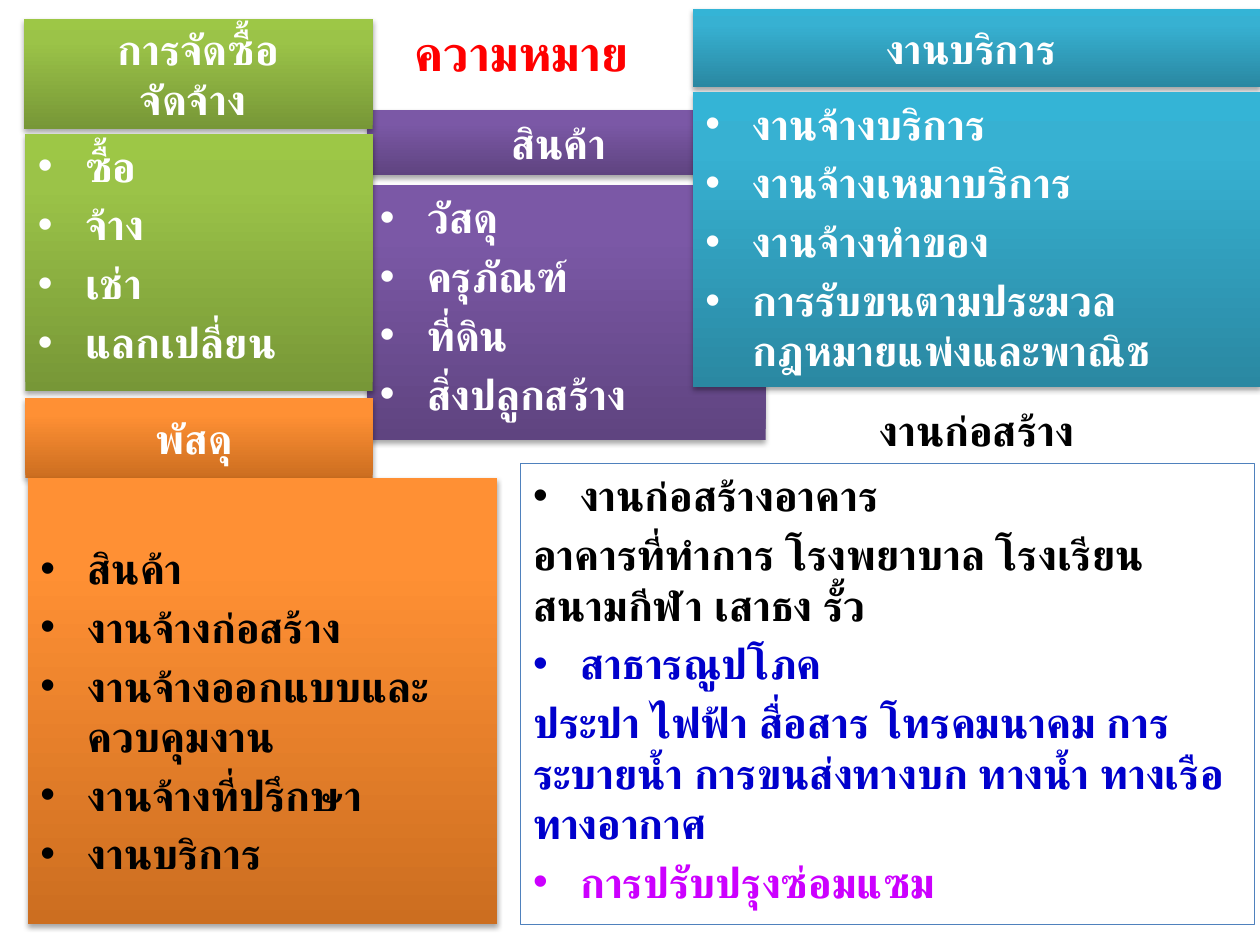
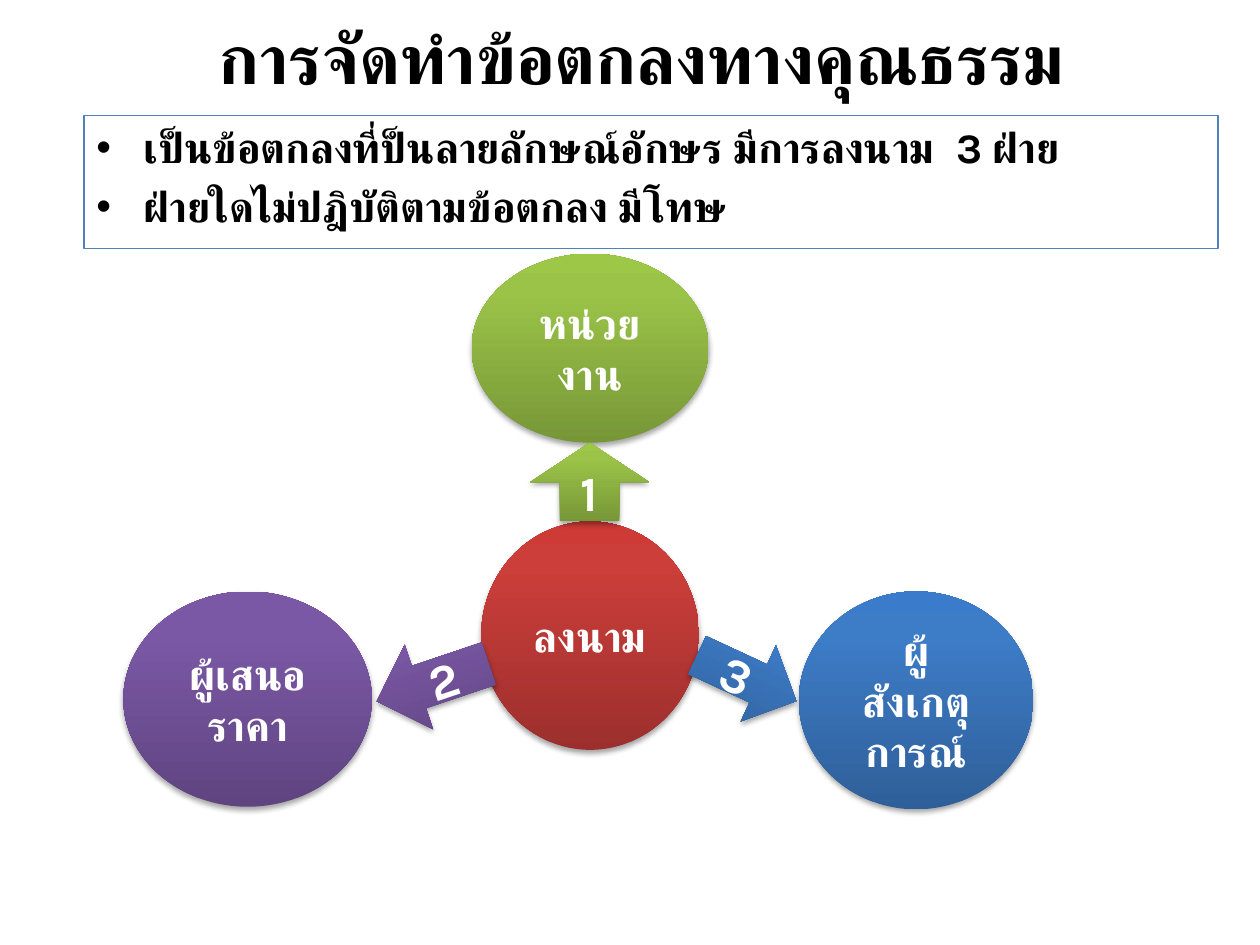
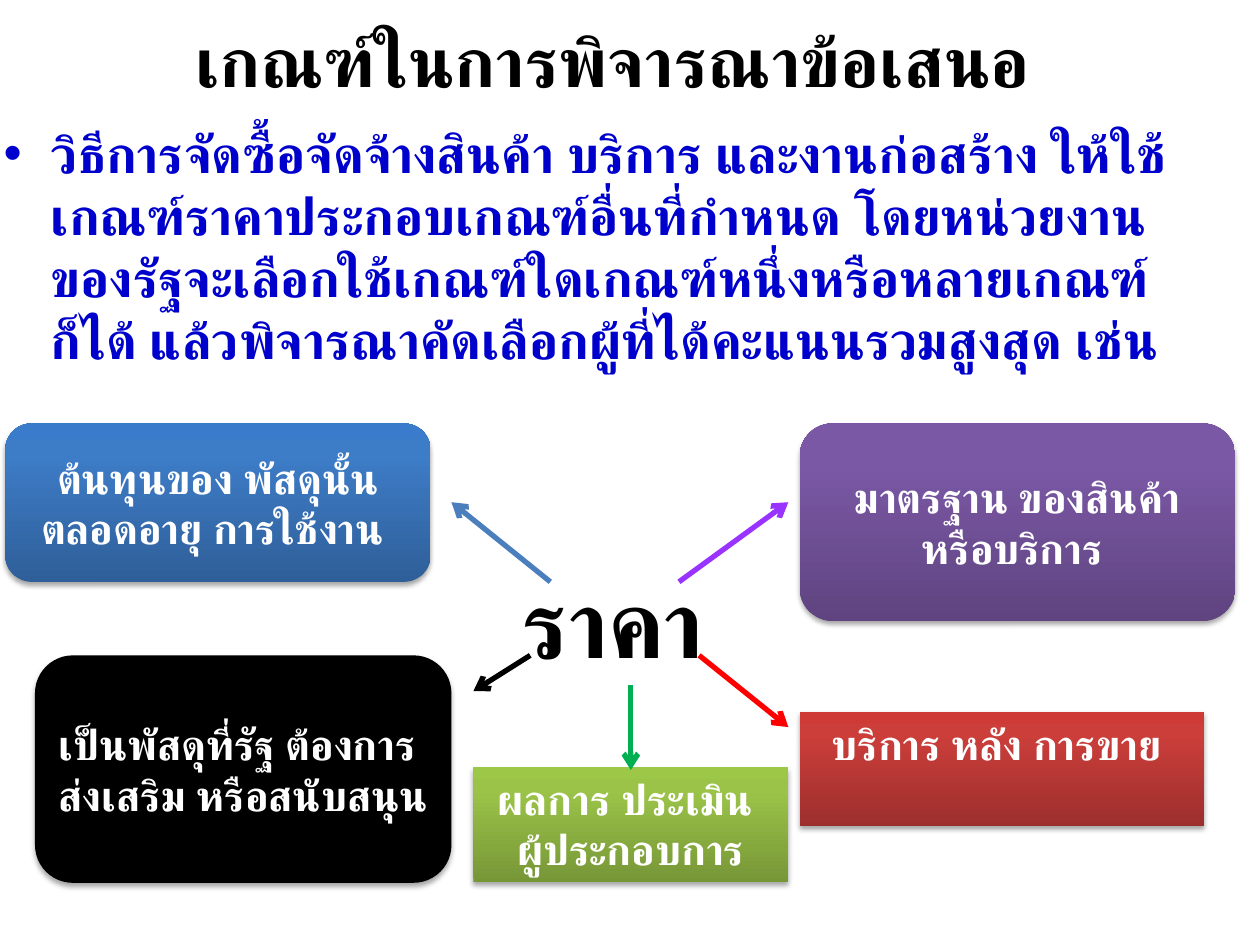
from dataclasses import dataclass

import pptx
import pptx.dml.color
import pptx.enum.shapes
import pptx.enum.text
import pptx.oxml
import pptx.oxml.ns
import pptx.util
from lxml import etree

Pt = pptx.util.Pt
qn = pptx.oxml.ns.qn
Kind = pptx.enum.shapes.MSO_SHAPE
Align = pptx.enum.text.PP_ALIGN
Anchor = pptx.enum.text.MSO_ANCHOR


@dataclass(frozen=True)
class Theme:
    font: str = "Karla"
    white: str = "FFFFFF"
    black: str = "000000"
    red: str = "FF0000"
    navy: str = "0000CC"
    magenta: str = "CC00FF"
    violet: str = "9933FF"
    leaf: str = "00B050"
    steel: str = "4B7EBC"
    border: str = "4F81BD"
    text: float = 24
    heading: float = 23.4
    number: float = 28
    lead: float = 29.6
    title: float = 39.6
    hero: float = 54
    indent: float = 27
    border_width: float = 0.75
    arrow_width: float = 3


theme = Theme()
GRADIENTS = {
    "purple": ("5F4480", "7B58A6", "7C57A8"),
    "cyan": ("2A88A2", "37B1D2", "34B4D6"),
    "green": ("779737", "9BC348", "9DC746"),
    "orange": ("CC6E20", "FF9034", "FF9136"),
    "red": ("9C2F2D", "CB3E3A", "CE3B37"),
    "blue": ("2F5F99", "3D7CC7", "3A7CCB"),
}
GRADIENT_STOPS = (0, 0.8, 1)

PANELS = [
    {
        "fill": "purple", "heading": "สินค้า ", "heading_size": theme.text,
        "heading_box": (210, 63, 225, 37), "list_box": (210, 106, 227.5, 145.5),
        "items": ["วัสดุ", "ครุภัณฑ์", "ที่ดิน", "สิ่งปลูกสร้าง"],
    },
    {
        "fill": "cyan", "heading": "งานบริการ ", "heading_size": theme.heading,
        "heading_box": (396, 5, 324, 44.5), "list_box": (396, 52.5, 324, 168.5),
        "items": ["งานจ้างบริการ", "งานจ้างเหมาบริการ", "งานจ้างทำของ",
                  "การรับขนตามประมวลกฎหมายแพ่งและพาณิช"],
    },
    {
        "fill": "green", "heading": "การจัดซื้อ\nจัดจ้าง ", "heading_size": theme.text,
        "heading_box": (13.5, 11, 199.5, 62.5), "list_box": (14.5, 76.5, 198.5, 147),
        "items": ["ซื้อ", "จ้าง", "เช่า", "แลกเปลี่ยน"],
    },
    {
        "fill": "orange", "heading": "พัสดุ ", "heading_size": theme.heading,
        "heading_box": (14.5, 227.5, 198.5, 45.5), "list_box": (16, 273, 268, 255),
        "items": ["สินค้า", "งานจ้างก่อสร้าง", "งานจ้างออกแบบและควบคุมงาน",
                  "งานจ้างที่ปรึกษา", "งานบริการ"],
        "color": theme.black, "top_inset": 37,
    },
]
MEANING = ("ความหมาย", (230, 9.5, 155.5, 41))
CONSTRUCTION_HEADING = ("งานก่อสร้าง ", (456.5, 222.5, 209.5, 45.5))
CONSTRUCTION_BOX = (297.5, 265, 419.5, 263.5)
CONSTRUCTION = [
    ("งานก่อสร้างอาคาร", theme.black, True),
    ("อาคารที่ทำการ โรงพยาบาล โรงเรียน สนามกีฬา เสาธง รั้ว", theme.black, False),
    ("สาธารณูปโภค", theme.navy, True),
    ("ประปา ไฟฟ้า สื่อสาร โทรคมนาคม การระบายน้ำ การขนส่งทางบก ทางน้ำ ทางเรือ ทางอากาศ",
     theme.navy, False),
    ("การปรับปรุงซ่อมแซม", theme.magenta, True),
]

AGREEMENT_TITLE = ("การจัดทำข้อตกลงทางคุณธรรม", (42.5, 9.5, 648, 45.5))
AGREEMENT_BOX = (48, 66, 648, 76)
AGREEMENT = ["เป็นข้อตกลงที่ป็นลายลักษณ์อักษร มีการลงนาม  3 ฝ่าย",
             "ฝ่ายใดไม่ปฎิบัติตามข้อตกลง มีโทษ"]
PARTIES = [
    ("red", (275, 298, 124.5, 130.5), ["ลงนาม"]),
    ("purple", (70.5, 338, 142, 123), ["ผู้เสนอราคา"]),
    ("blue", (456.5, 338, 134, 124.5), ["ผู้", "สังเกตุการณ์"]),
    ("green", (269.5, 145, 135.5, 108), ["หน่วย", "งาน"]),
]
PARTY_ARROWS = [
    (Kind.UP_ARROW, "green", (303, 253, 68, 45), 0),
    (Kind.LEFT_ARROW, "purple", (213.5, 364.5, 67.5, 51), 341.4),
    (Kind.RIGHT_ARROW, "blue", (395.5, 363.5, 62.5, 48), 24.9),
]

CRITERIA_TITLE = ("เกณฑ์ในการพิจารณาข้อเสนอ ", (-1.5, 9.5, 713, 49.5))
CRITERIA_BOX = (-5, 66, 713, 178)
CRITERIA = ["วิธีการจัดซื้อจัดจ้างสินค้า บริการ และงานก่อสร้าง ให้ใช้เกณฑ์ราคาประกอบเกณฑ์อื่นที่กำหนด "
            "โดยหน่วยงานของรัฐจะเลือกใช้เกณฑ์ใดเกณฑ์หนึ่งหรือหลายเกณฑ์ก็ได้ "
            "แล้วพิจารณาคัดเลือกผู้ที่ได้คะแนนรวมสูงสุด เช่น"]
PRICE = ("ราคา", (291.5, 319, 138.5, 72.5))
FACTORS = [
    (Kind.RECTANGLE, "red", (457, 407, 231, 65), ["บริการ หลัง การขาย "],
     Align.CENTER, Anchor.TOP),
    (Kind.ROUNDED_RECTANGLE, "blue", (3, 242, 243, 90.5),
     ["ต้นทุนของ พัสดุนั้น ตลอดอายุ การใช้งาน "], Align.CENTER, Anchor.MIDDLE),
    (Kind.ROUNDED_RECTANGLE, "purple", (457, 242, 249, 113),
     ["มาตรฐาน ของสินค้า หรือบริการ "], Align.CENTER, Anchor.MIDDLE),
    (Kind.ROUNDED_RECTANGLE, theme.black, (20, 374.5, 238, 130),
     ["เป็นพัสดุที่รัฐ ต้องการส่งเสริม หรือสนับสนุน"], Align.LEFT, Anchor.MIDDLE),
    (Kind.RECTANGLE, "green", (270.5, 438.5, 180, 65.5),
     ["ผลการ ประเมิน ", "ผู้ประกอบการ"], Align.CENTER, Anchor.TOP),
]
PRICE_ARROWS = [
    (theme.steel, (314.5, 332.5), (258, 287)),
    (theme.violet, (388, 332.5), (450.5, 287)),
    (theme.leaf, (360.5, 391.5), (360.5, 440)),
    (theme.red, (399.5, 374.5), (450.5, 415.5)),
    (theme.black, (303, 374.5), (270.5, 395)),
]


def rgb(color):
    return pptx.dml.color.RGBColor.from_string(color)


def points(values):
    return [Pt(value) for value in values]


def add_bullet(properties):
    properties.set("marL", str(Pt(theme.indent)))
    properties.set("indent", str(-Pt(theme.indent)))
    defaults = properties.find(qn("a:defRPr"))
    for tag, name, value in (("a:buFont", "typeface", "Arial"), ("a:buChar", "char", "•")):
        mark = etree.Element(qn(tag))
        mark.set(name, value)
        defaults.addprevious(mark)


def write(shape, lines, size=theme.text, color=theme.white, align=Align.CENTER,
          anchor=Anchor.MIDDLE, listed=False):
    frame = shape.text_frame
    frame.word_wrap = True
    frame.vertical_anchor = anchor
    for index, line in enumerate(lines):
        text, line_color, bullet = line if isinstance(line, tuple) else (line, color, listed)
        paragraph = frame.add_paragraph() if index else frame.paragraphs[0]
        paragraph.text = text
        paragraph.alignment = align
        if listed:
            paragraph.space_before = Pt(size * 0.2)
        font = paragraph.font
        font.name, font.size, font.bold = theme.font, Pt(size), True
        font.color.rgb = rgb(line_color)
        properties = paragraph._p.pPr
        complex_font = etree.SubElement(properties.find(qn("a:defRPr")), qn("a:cs"))
        complex_font.set("typeface", theme.font)
        if bullet:
            add_bullet(properties)


def write_list(shape, lines, **style):
    write(shape, lines, align=Align.LEFT, anchor=Anchor.TOP, listed=True, **style)


def add_shadow(shape):
    effects = shape._element.spPr.find(qn("a:effectLst"))
    shadow = etree.SubElement(effects, qn("a:outerShdw"), blurRad=str(Pt(3.1)),
                              dist=str(Pt(1.8)), dir="5400000", rotWithShape="0")
    color = etree.SubElement(shadow, qn("a:srgbClr"), val=theme.black)
    etree.SubElement(color, qn("a:alpha"), val="35000")


def fill_gradient(shape, colors):
    shape.fill.gradient()
    shape.fill.gradient_angle = 90
    stops = shape._element.spPr.find(qn("a:gradFill")).find(qn("a:gsLst"))
    for stop in list(stops):
        stops.remove(stop)
    for position, color in zip(GRADIENT_STOPS, colors):
        stop = etree.SubElement(stops, qn("a:gs"), pos=str(int(position * 100000)))
        etree.SubElement(stop, qn("a:srgbClr"), val=color)


def add_block(slide, kind, box, fill):
    shape = slide.shapes.add_shape(kind, *points(box))
    shape.shadow.inherit = False
    shape.line.fill.background()
    if fill in GRADIENTS:
        fill_gradient(shape, GRADIENTS[fill])
    else:
        shape.fill.solid()
        shape.fill.fore_color.rgb = rgb(fill)
    add_shadow(shape)
    return shape


def add_outline(slide, box):
    shape = slide.shapes.add_shape(Kind.RECTANGLE, *points(box))
    shape.shadow.inherit = False
    shape.fill.background()
    shape.line.color.rgb = rgb(theme.border)
    shape.line.width = Pt(theme.border_width)
    return shape


def add_label(slide, label, **style):
    text, box = label
    write(slide.shapes.add_textbox(*points(box)), [text], **{"color": theme.black, **style})


def add_arrow(slide, color, start, end):
    connector = slide.shapes.add_connector(
        pptx.enum.shapes.MSO_CONNECTOR.STRAIGHT, *points(start + end))
    connector.line.color.rgb = rgb(color)
    connector.line.width = Pt(theme.arrow_width)
    etree.SubElement(connector.line._get_or_add_ln(), qn("a:tailEnd"), type="arrow")
    etree.SubElement(connector._element.spPr, qn("a:effectLst"))


def build_meaning(slide):
    for panel in PANELS:
        heading = add_block(slide, Kind.RECTANGLE, panel["heading_box"], panel["fill"])
        write(heading, [panel["heading"]], size=panel["heading_size"])
        body = add_block(slide, Kind.RECTANGLE, panel["list_box"], panel["fill"])
        body.text_frame.margin_top = Pt(panel.get("top_inset", 3.6))
        write_list(body, panel["items"], color=panel.get("color", theme.white))
    add_label(slide, MEANING, size=theme.number, color=theme.red,
              align=Align.LEFT, anchor=Anchor.TOP)
    add_label(slide, CONSTRUCTION_HEADING)
    write_list(add_outline(slide, CONSTRUCTION_BOX), CONSTRUCTION)


def build_agreement(slide):
    add_label(slide, AGREEMENT_TITLE, size=theme.title)
    write_list(add_outline(slide, AGREEMENT_BOX), AGREEMENT, color=theme.black)
    for fill, box, lines in PARTIES:
        write(add_block(slide, Kind.OVAL, box, fill), lines)
    for number, (kind, fill, box, rotation) in enumerate(PARTY_ARROWS, 1):
        arrow = add_block(slide, kind, box, fill)
        arrow.rotation = rotation
        write(arrow, [str(number)], size=theme.number)


def build_criteria(slide):
    add_label(slide, CRITERIA_TITLE, size=theme.title)
    write_list(slide.shapes.add_textbox(*points(CRITERIA_BOX)), CRITERIA,
               size=theme.lead, color=theme.navy)
    for kind, fill, box, lines, align, anchor in FACTORS:
        write(add_block(slide, kind, box, fill), lines, align=align, anchor=anchor)
    add_label(slide, PRICE, size=theme.hero, align=Align.LEFT, anchor=Anchor.TOP)
    for color, start, end in PRICE_ARROWS:
        add_arrow(slide, color, start, end)


def main():
    presentation = pptx.Presentation()
    presentation.slide_width, presentation.slide_height = Pt(720), Pt(540)
    for build in (build_meaning, build_agreement, build_criteria):
        build(presentation.slides.add_slide(presentation.slide_layouts[6]))
    presentation.save("out.pptx")


if __name__ == "__main__":
    main()
